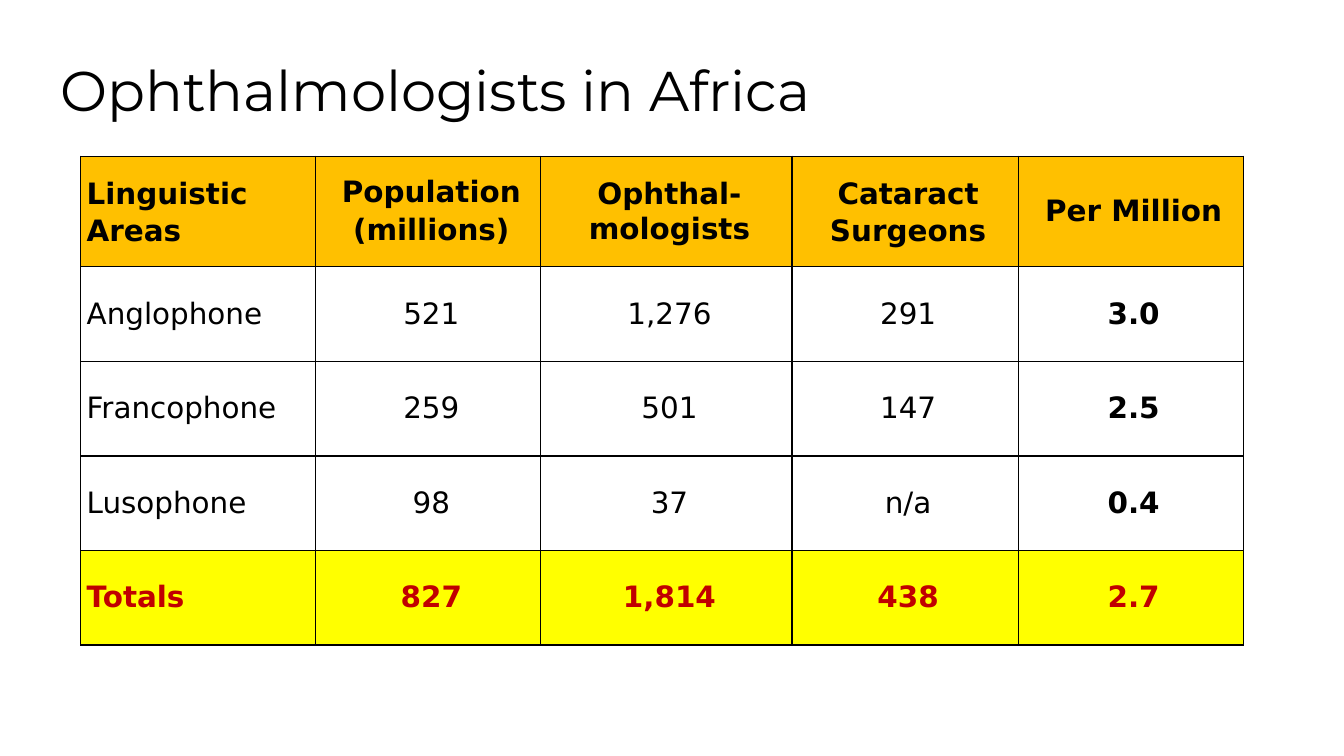
import pptx
import pptx.dml.color
import pptx.enum.text
import pptx.oxml
import pptx.oxml.ns
import pptx.util

Inches = pptx.util.Inches
Pt = pptx.util.Pt
ALIGN = pptx.enum.text.PP_ALIGN
MIDDLE = pptx.enum.text.MSO_ANCHOR.MIDDLE

COLUMN_WIDTHS = [2.33, 2.23, 2.49, 2.24, 2.23]
ROW_HEIGHTS = [1.1] + [0.94] * 4
HEADER_SPACING = [1.08, 1.0, 1.03, 1.08, 1.0]
AREAS = [
    ["Linguistic Areas", "Population\n(millions)", "Ophthal- mologists",
     "Cataract Surgeons", "Per Million"],
    ["Anglophone", "521", "1,276", "291", "3.0"],
    ["Francophone", "259", "501", "147", "2.5"],
    ["Lusophone", "98", "37", "n/a", "0.4"],
    ["Totals", "827", "1,814", "438", "2.7"],
]


def color(value):
    """Return the colour for a hex string."""
    return pptx.dml.color.RGBColor.from_string(value)


def write(frame, text, font, size, ink="000000", bold=False,
          align=ALIGN.LEFT, spacing=1.0, indent=0, gap=0):
    """Fill a text frame, one paragraph for each line of text."""
    frame.word_wrap = True
    for index, line in enumerate(text.split("\n")):
        paragraph = frame.add_paragraph() if index else frame.paragraphs[0]
        paragraph.alignment = align
        paragraph.line_spacing = spacing
        if index:
            paragraph.space_before = Pt(gap)
        if indent:
            properties = paragraph._p.get_or_add_pPr()
            properties.set("marL", str(Inches(indent)))
            properties.set("indent", "0")
        run = paragraph.add_run()
        run.text = line
        run.font.name = font
        run.font.size = Pt(size)
        run.font.bold = bold
        run.font.color.rgb = color(ink)


def add_borders(cell, ink="000000", width=1):
    """Draw a line on all four sides of a cell."""
    properties = cell._tc.get_or_add_tcPr()
    for position, side in enumerate(("lnL", "lnR", "lnT", "lnB")):
        properties.insert(position, pptx.oxml.parse_xml(
            f'<a:{side} {pptx.oxml.ns.nsdecls("a")} w="{Pt(width)}">'
            f'<a:solidFill><a:srgbClr val="{ink}"/></a:solidFill></a:{side}>'))


def add_title(slide, left, top, width, height):
    """Place the slide title in the given box."""
    title = slide.shapes.add_textbox(
        Inches(left), Inches(top), Inches(width), Inches(height))
    title.text_frame.vertical_anchor = MIDDLE
    write(title.text_frame, "Ophthalmologists in Africa", "Montserrat", 40,
          spacing=0.9)


def add_area_table(slide, left, top, width, height):
    """Place the table of linguistic areas in the given box."""
    table = slide.shapes.add_table(
        len(AREAS), len(COLUMN_WIDTHS), Inches(left), Inches(top),
        Inches(width), Inches(height)).table
    for column, share in zip(table.columns, COLUMN_WIDTHS):
        column.width = Inches(width * share / sum(COLUMN_WIDTHS))
    for row, share in zip(table.rows, ROW_HEIGHTS):
        row.height = Inches(height * share / sum(ROW_HEIGHTS))

    last_row, last_column = len(AREAS) - 1, len(COLUMN_WIDTHS) - 1
    band_fills = {0: "FFC000", last_row: "FFFF00"}
    for r, area in enumerate(AREAS):
        for c, text in enumerate(area):
            cell = table.cell(r, c)
            cell.margin_left = cell.margin_right = 0
            cell.margin_top = cell.margin_bottom = 0
            cell.vertical_anchor = MIDDLE
            if r in band_fills:
                cell.fill.solid()
                cell.fill.fore_color.rgb = color(band_fills[r])
            else:
                cell.fill.background()
            add_borders(cell)
            write(cell.text_frame, text, "DejaVu Sans", 21,
                  ink="C00000" if r == last_row else "000000",
                  bold=r in band_fills or c == last_column,
                  align=ALIGN.CENTER if c else ALIGN.LEFT,
                  spacing=HEADER_SPACING[c] if r == 0 else 1.0,
                  indent=0.06, gap=2.8)


def main():
    """Build the slide and save it."""
    deck = pptx.Presentation()
    deck.slide_width = Inches(13.33)
    deck.slide_height = Inches(7.5)
    slide = deck.slides.add_slide(deck.slide_layouts[6])
    add_area_table(slide, 0.8, 1.55, 11.53, 4.85)
    add_title(slide, 0.5, 0.3, 12.17, 1.25)
    deck.save("out.pptx")


if __name__ == "__main__":
    main()
